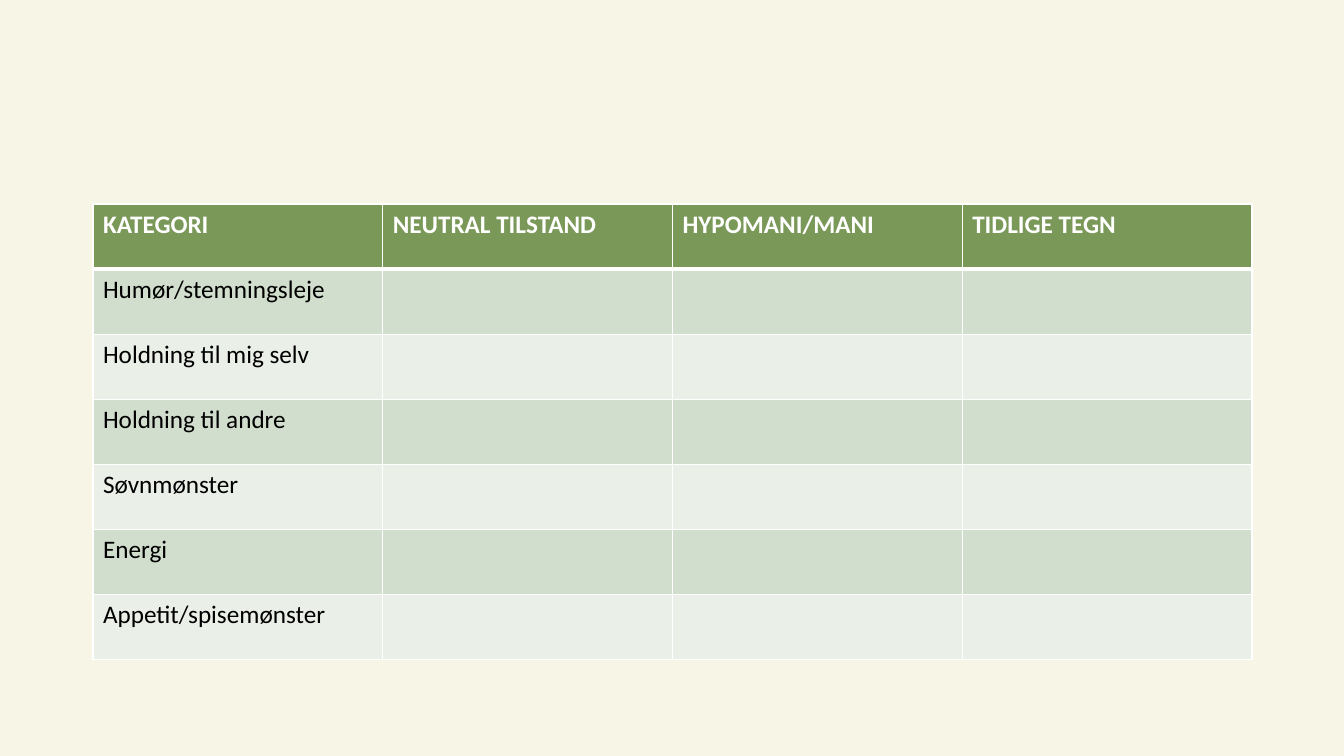
import pptx
import pptx.dml.color
import pptx.oxml
import pptx.oxml.ns
import pptx.util

EMU_PER_PX = 9071.43  # 1344 px across 13.33 inches

HEADINGS = ["KATEGORI", "NEUTRAL TILSTAND", "HYPOMANI/MANI", "TIDLIGE TEGN"]
CATEGORIES = [
    "Humør/stemningsleje",
    "Holdning til mig selv",
    "Holdning til andre",
    "Søvnmønster",
    "Energi",
    "Appetit/spisemønster",
]


def px(length):
    return pptx.util.Emu(round(length * EMU_PER_PX))


def color(hex_string):
    return pptx.dml.color.RGBColor.from_string(hex_string)


def write(frame, text, *, font="Calibri", size=18, ink="000000", bold=False):
    run = frame.paragraphs[0].add_run()
    run.text = text
    run.font.name = font
    run.font.size = pptx.util.Pt(size)
    run.font.bold = bold
    run.font.color.rgb = color(ink)


class SlideBuilder:
    background = "F7F6E6"
    header = "7A9857"
    bands = ("D2DECD", "EAEFE8")
    rule = "FFFFFF"

    def __init__(self, deck):
        self.slide = deck.slides.add_slide(deck.slide_layouts[6])
        fill = self.slide.background.fill
        fill.solid()
        fill.fore_color.rgb = color(self.background)

    def border(self, cell, side, points):
        line = pptx.oxml.parse_xml(
            f'<a:ln{side} {pptx.oxml.ns.nsdecls("a")} w="{pptx.util.Pt(points)}">'
            f'<a:solidFill><a:srgbClr val="{self.rule}"/></a:solidFill></a:ln{side}>'
        )
        cell._tc.get_or_add_tcPr().append(line)

    def style_cell(self, cell, shade, top=1, bottom=1):
        # Borders come before the fill in the cell properties
        for side, points in (("L", 1), ("R", 1), ("T", top), ("B", bottom)):
            self.border(cell, side, points)
        cell.fill.solid()
        cell.fill.fore_color.rgb = color(shade)

    def table(self, left, top, width, height, headings, categories):
        grid = self.slide.shapes.add_table(
            len(categories) + 1, len(headings),
            px(left), px(top), px(width), px(height),
        ).table

        # Header row, with a heavier rule below it
        for column, heading in enumerate(headings):
            cell = grid.cell(0, column)
            self.style_cell(cell, self.header, bottom=3)
            write(cell.text_frame, heading, ink="FFFFFF", bold=True)

        # Banded rows: a category, then empty cells to fill in
        for row, category in enumerate(categories, start=1):
            shade = self.bands[(row - 1) % 2]
            for column in range(len(headings)):
                self.style_cell(grid.cell(row, column), shade, top=3 if row == 1 else 1)
            write(grid.cell(row, 0).text_frame, category)


def main():
    deck = pptx.Presentation()
    deck.slide_width, deck.slide_height = px(1344), px(756)
    builder = SlideBuilder(deck)
    builder.table(93, 204, 1159, 456, HEADINGS, CATEGORIES)
    deck.save("out.pptx")


if __name__ == "__main__":
    main()
